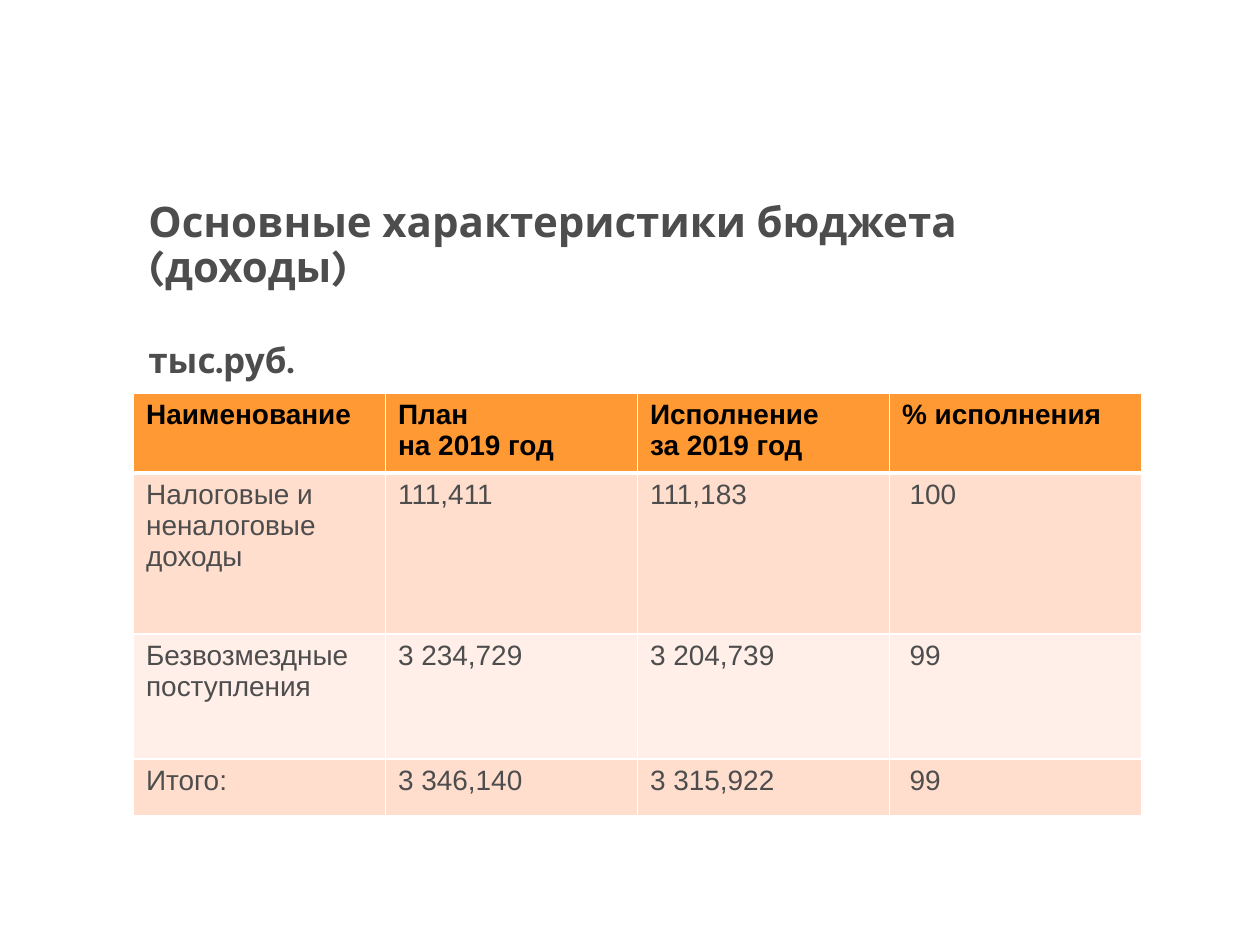
from lxml import etree
from pptx import Presentation
from pptx.dml.color import RGBColor
from pptx.enum.text import MSO_ANCHOR, PP_ALIGN
from pptx.oxml.ns import qn
from pptx.util import Inches, Pt

MIDDLE = MSO_ANCHOR.MIDDLE
LEFT = PP_ALIGN.LEFT

# Content
TITLE = [  # text, size, space before
    ("Основные характеристики бюджета", 24, 0),
    ("(доходы)", 24, 0),
    ("тыс.руб.", 20, 29.4),
]
ROWS = [
    ("Наименование", "План\nна 2019 год", "Исполнение\nза 2019 год", "% исполнения"),
    ("Налоговые и неналоговые доходы", "111,411", "111,183", "100"),
    ("Безвозмездные поступления", "3 234,729", "3 204,739", "99"),
    ("Итого:", "3 346,140", "3 315,922", "99"),
]
ROW_HEIGHTS = [0.59, 1.28, 0.99, 0.45]
COL_WIDTH = 2
COLORS = {
    "text": "4D4D4D",
    "header_text": "000000",
    "header": "FF9933",
    "odd": "FFDECE",
    "even": "FFEFE8",
    "border": "FFFFFF",
}


def rgb(name):
    return RGBColor.from_string(COLORS[name])


def set_font(p, name, size, color, bold):
    p.alignment = LEFT
    p.font.name = name
    p.font.size = Pt(size)
    p.font.bold = bold
    p.font.color.rgb = rgb(color)


def set_borders(cell, widths):
    tc_pr = cell._tc.get_or_add_tcPr()
    for side, width in widths.items():
        ln = etree.SubElement(tc_pr, qn(f"a:ln{side}"), w=str(Pt(width)))
        fill = etree.SubElement(ln, qn("a:solidFill"))
        etree.SubElement(fill, qn("a:srgbClr"), val=COLORS["border"])


prs = Presentation()
prs.slide_width, prs.slide_height = Inches(10), Inches(7.5)
s = prs.slides.add_slide(prs.slide_layouts[6])

# Title
tf = s.shapes.add_textbox(Inches(1.08), Inches(1.92), Inches(8), Inches(0.78)).text_frame
tf.word_wrap = True
tf.vertical_anchor = MIDDLE
for i, (text, size, before) in enumerate(TITLE):
    p = tf.add_paragraph() if i else tf.paragraphs[0]
    p.text = text
    p.line_spacing = 0.9
    p.space_before = Pt(before)
    set_font(p, "Karla", size, "text", True)

# Table
n_cols = len(ROWS[0])
table = s.shapes.add_table(
    len(ROWS), n_cols, Inches(1.06), Inches(3.12),
    Inches(COL_WIDTH * n_cols), Inches(sum(ROW_HEIGHTS)),
).table
for col in table.columns:
    col.width = Inches(COL_WIDTH)

for r, (row, height) in enumerate(zip(ROWS, ROW_HEIGHTS)):
    table.rows[r].height = Inches(height)
    header = r == 0
    fill = "header" if header else "odd" if r % 2 else "even"
    for c, text in enumerate(row):
        cell = table.cell(r, c)
        set_borders(cell, {"L": 1, "R": 1, "T": 3 if r == 1 else 1, "B": 3 if header else 1})
        cell.fill.solid()
        cell.fill.fore_color.rgb = rgb(fill)
        if c == n_cols - 1 and not header:
            cell.margin_left = Inches(0.16)  # percentages are set in slightly
        cell.text_frame.text = text
        for p in cell.text_frame.paragraphs:
            set_font(p, "Arial", 16, "header_text" if header else "text", header)

prs.save("out.pptx")
